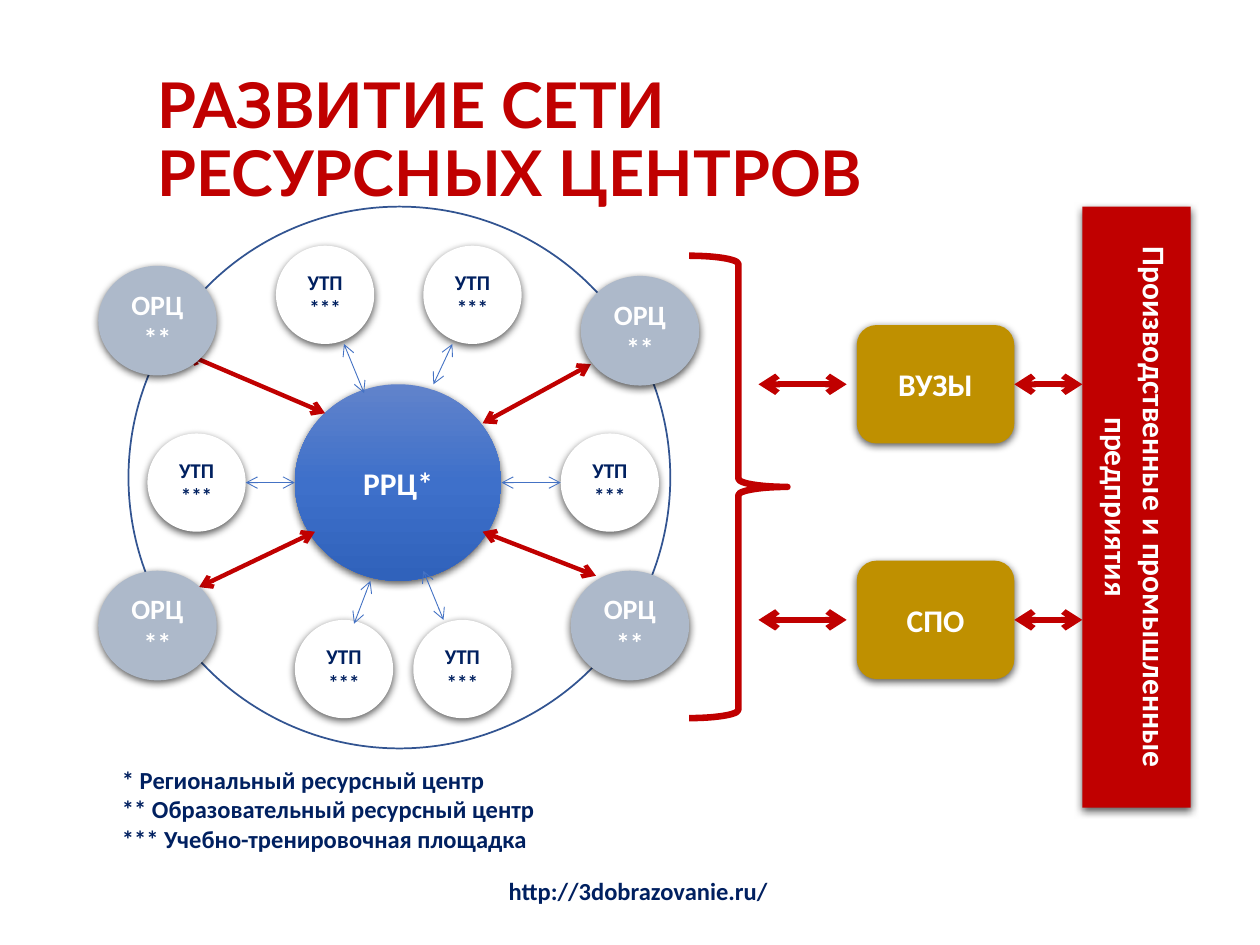
from copy import deepcopy

from lxml.etree import SubElement
from pptx import Presentation
from pptx.dml.color import RGBColor
from pptx.enum.shapes import MSO_CONNECTOR as Link, MSO_SHAPE as Shape
from pptx.enum.text import MSO_ANCHOR as Anchor, MSO_AUTO_SIZE as AutoSize, PP_ALIGN as Align
from pptx.oxml.ns import qn
from pptx.util import Inches, Pt

RED, GOLD, NAVY, WHITE = "C00000", "BF9000", "002060", "FFFFFF"
GREY, BLUE, RING = "ADB9CA", "4472C4", "325491"
GRADIENT = ("6183CB", "3E70CA", "3062BB")

SITES = [(2.19, 1.95), (3.36, 1.95), (3.28, 4.92), (2.34, 4.92), (1.17, 3.44), (4.45, 3.44)]
CENTRES = [(4.61, 2.19), (4.53, 4.53), (0.78, 2.11), (0.78, 4.53)]
CENTRE_LINKS = [
    (3.83, 3.36, 4.69, 2.89), (1.58, 4.66, 2.5, 4.22),
    (3.83, 4.22, 4.73, 4.57), (1.48, 2.81, 2.58, 3.28),
]
SITE_LINKS = [
    (2.73, 2.73, 2.89, 3.12), (3.36, 4.53, 3.52, 4.92), (2.94, 4.61, 2.81, 4.95),
    (3.59, 2.73, 3.44, 3.05), (1.95, 3.83, 2.34, 3.83), (3.98, 3.83, 4.45, 3.83),
]
SCHOOLS = [("ВУЗЫ", 2.58), ("СПО", 4.45)]
FOOTNOTES = [
    "* Региональный ресурсный центр",
    "** Образовательный ресурсный центр",
    "*** Учебно-тренировочная площадка",
]


def rgb(value):
    """Turn a hex string into a colour."""
    return RGBColor.from_string(value)


def write(frame, text, size, color, align, font="Calibri"):
    """Fill a text frame with bold text in one style."""
    frame.word_wrap = True
    frame.text = text
    for para in frame.paragraphs:
        para.alignment = align
        for span in para.runs:
            span.font.name = font
            span.font.size = Pt(size)
            span.font.bold = True
            span.font.color.rgb = rgb(color)


def add_text(page, area, text, align):
    """Add a navy text box."""
    box = page.shapes.add_textbox(*map(Inches, area))
    write(box.text_frame, text, 14, NAVY, align)


def add_shadow(shape):
    """Give a shape a soft shadow below it."""
    effects = shape._element.spPr.find(qn("a:effectLst"))
    shadow = SubElement(effects, qn("a:outerShdw"), blurRad=str(Pt(4.5)),
                        dist=str(Pt(1.5)), dir="5400000", algn="ctr", rotWithShape="0")
    black = SubElement(shadow, qn("a:srgbClr"), val="000000")
    SubElement(black, qn("a:alpha"), val="63000")


def add_block(page, kind, area, text, fill, size=18, color=WHITE):
    """Add a filled, shadowed shape with a centred label."""
    block = page.shapes.add_shape(kind, *map(Inches, area))
    block.shadow.inherit = False
    add_shadow(block)
    block.fill.solid()
    block.fill.fore_color.rgb = rgb(fill)
    block.line.fill.background()
    block.text_frame.vertical_anchor = Anchor.MIDDLE
    write(block.text_frame, text, size, color, Align.CENTER)
    return block


def add_outline(page, kind, area, color, width):
    """Add an unfilled shape with a coloured line."""
    outline = page.shapes.add_shape(kind, *map(Inches, area))
    outline.shadow.inherit = False
    outline.fill.background()
    outline.line.color.rgb = rgb(color)
    outline.line.width = Pt(width)


def add_arrow(page, ends, color, width):
    """Add a straight line with an open arrowhead at both ends."""
    arrow = page.shapes.add_connector(Link.STRAIGHT, *map(Inches, ends))
    arrow.line.color.rgb = rgb(color)
    arrow.line.width = Pt(width)
    SubElement(arrow._element.spPr, qn("a:effectLst"))
    line = arrow.line._get_or_add_ln()
    for end in ("a:headEnd", "a:tailEnd"):
        SubElement(line, qn(end), type="arrow")
    return arrow


def shade(shape, colors):
    """Fill a shape with a three-colour gradient from top to bottom."""
    shape.fill.gradient()
    shape.fill.gradient_angle = 270
    stops = shape._element.spPr.find(qn("a:gradFill")).find(qn("a:gsLst"))
    stops.insert(1, deepcopy(stops[0]))
    for stop, color, position in zip(shape.fill.gradient_stops, colors, (0, 0.5, 1)):
        stop.color.rgb = rgb(color)
        stop.position = position


def add_title(page, text):
    """Place and format the slide title."""
    title = page.shapes.title
    title.left, title.top, title.width, title.height = map(Inches, (1.15, 0.4, 6.55, 1.45))
    frame = title.text_frame
    write(frame, text, 36, RED, Align.LEFT, "Lato")
    frame.auto_size = AutoSize.NONE
    frame.vertical_anchor = Anchor.MIDDLE
    frame.paragraphs[0].line_spacing = 0.9


def add_partners(page):
    """Add the schools, the industry bar and the arrows between them."""
    bar = add_block(page, Shape.RECTANGLE, (8.59, 1.64, 0.86, 4.77),
                    "Производственные и промышленные предприятия", RED)
    bar.text_frame._txBody.bodyPr.set("vert", "vert")
    for name, top in SCHOOLS:
        school = add_block(page, Shape.ROUNDED_RECTANGLE, (6.8, top, 1.25, 0.94), name, GOLD)
        middle = top + 0.47
        add_arrow(page, (6.02, middle, 6.72, middle), RED, 3.5)
        add_arrow(page, (8.05, middle, 8.59, middle), RED, 3.5).begin_connect(school, 3)


def add_network(page):
    """Add the regional centre with its ring of centres and sites."""
    hub = add_block(page, Shape.OVAL, (2.34, 3.05, 1.64, 1.56), "РРЦ*", BLUE)
    shade(hub, GRADIENT)
    for ends in CENTRE_LINKS:
        add_arrow(page, ends, RED, 2.5)
    for left, top in SITES:
        add_block(page, Shape.OVAL, (left, top, 0.78, 0.78), "УТП***", WHITE, 12, NAVY)
    for ends in SITE_LINKS:
        add_arrow(page, ends, BLUE, 0.5)
    add_outline(page, Shape.OVAL, (1.02, 1.64, 4.3, 4.3), RING, 1)
    for left, top in CENTRES:
        add_block(page, Shape.OVAL, (left, top, 0.94, 0.87), "ОРЦ**", GREY, 16)


def main():
    """Build and save the slide."""
    deck = Presentation()
    deck.slide_width, deck.slide_height = Inches(10), Inches(7.5)
    page = deck.slides.add_slide(deck.slide_layouts[5])
    add_title(page, "РАЗВИТИЕ СЕТИ РЕСУРСНЫХ ЦЕНТРОВ")
    add_partners(page)
    add_outline(page, Shape.RIGHT_BRACE, (5.47, 2.03, 0.78, 3.67), RED, 3.75)
    add_network(page)
    add_text(page, (0.87, 6.02, 5.3, 0.81), "\n".join(FOOTNOTES), Align.JUSTIFY)
    add_text(page, (0.13, 6.9, 9.87, 0.34), "http://3dobrazovanie.ru/", Align.CENTER)
    deck.save("out.pptx")


if __name__ == "__main__":
    main()
